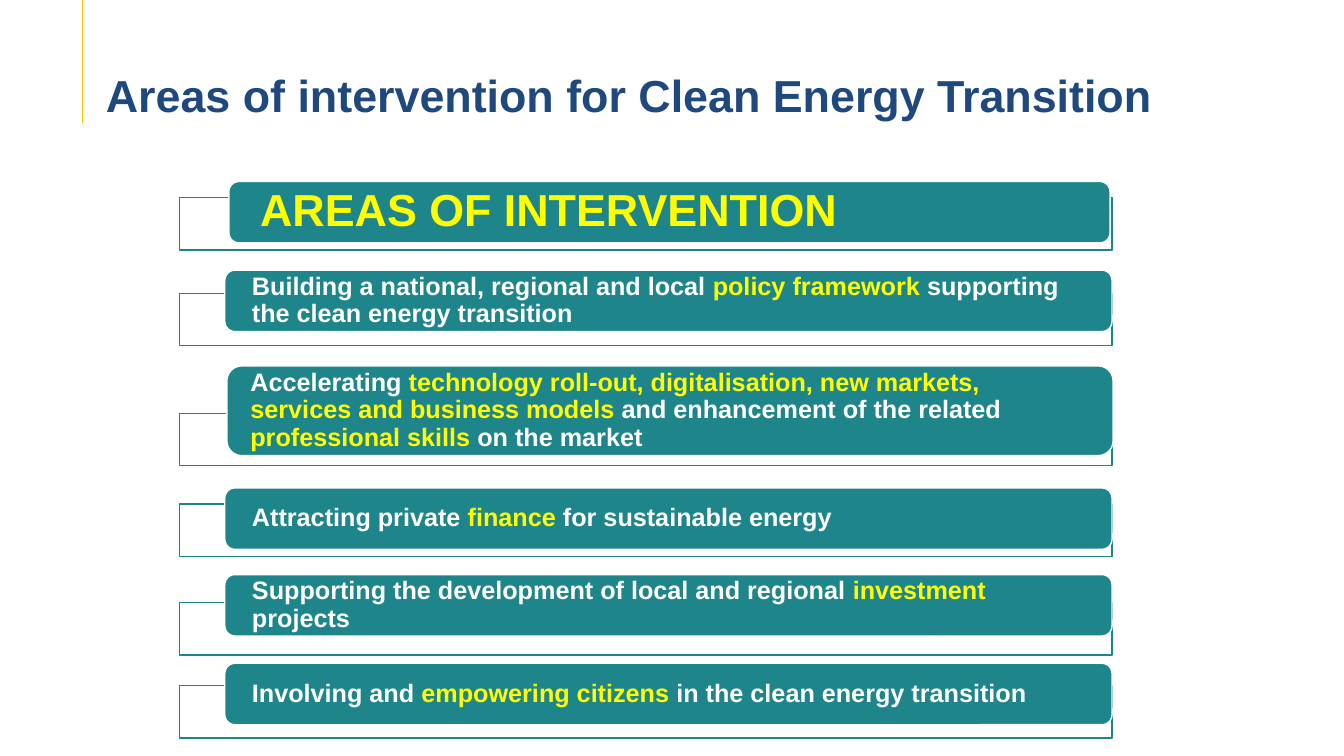
"""Build the slide on areas of intervention for the clean energy transition."""
import pptx
import pptx.dml.color
import pptx.enum.shapes
import pptx.enum.text
import pptx.oxml.ns
import pptx.util
from lxml import etree

TITLE = "Areas of intervention for Clean Energy Transition"
COLORS = {"teal": "1E858B", "white": "FFFFFF", "yellow": "FFFF00",
          "navy": "1F497D", "amber": "FFC000"}
WIDE = {"left": 2.23, "width": 8.8, "height": 0.61, "inset": 0.24, "size": 18}
HEAD = {"left": 2.27, "width": 8.74, "height": 0.61, "inset": 0.28, "size": 32}
TALL = {"left": 2.25, "width": 8.79, "height": 0.89, "inset": 0.19, "size": 18}
FRAME = {"left": 1.78, "width": 9.25, "height": 0.52}
AREAS = [
    (1.96, 1.8, HEAD, [("AREAS OF INTERVENTION", "yellow")]),
    (2.91, 2.68, WIDE, [("Building a national, regional and local ", "white"),
                        ("policy framework ", "yellow"),
                        ("supporting the clean energy transition", "white")]),
    (4.1, 3.63, TALL, [("Accelerating ", "white"),
                       ("technology roll-out, digitalisation, new markets, "
                        "services and business models ", "yellow"),
                       ("and enhancement of the related ", "white"),
                       ("professional skills ", "yellow"),
                       ("on the market", "white")]),
    (5, 4.84, WIDE, [("Attracting private ", "white"), ("finance ", "yellow"),
                     ("for sustainable energy", "white")]),
    (5.98, 5.7, WIDE, [("Supporting the development of local and regional ", "white"),
                       ("investment ", "yellow"), ("projects", "white")]),
    (6.8, 6.58, WIDE, [("Involving and ", "white"), ("empowering citizens ", "yellow"),
                       ("in the clean energy transition", "white")]),
]
SHAPES = pptx.enum.shapes.MSO_SHAPE
ALIGN = pptx.enum.text.PP_ALIGN
ANCHOR = pptx.enum.text.MSO_ANCHOR
inch, pt = pptx.util.Inches, pptx.util.Pt


def apply(obj, **values):
    for name, value in values.items():
        setattr(obj, name, value)


def rgb(name):
    return pptx.dml.color.RGBColor.from_string(COLORS[name])


def paint(sp, fill):
    sp.fill.solid()
    sp.fill.fore_color.rgb = rgb(fill)


def add_run(p, text, size, color):
    r = p.add_run()
    r.text = text
    apply(r.font, name="Arial", size=pt(size), bold=True)
    r.font.color.rgb = rgb(color)


def add_box(s, kind, top, box, fill, line):
    sp = s.shapes.add_shape(kind, inch(box["left"]), inch(top),
                            inch(box["width"]), inch(box["height"]))
    sp.shadow.inherit = False
    paint(sp, fill)
    sp.line.color.rgb = rgb(line)
    sp.line.width = pt(1)
    return sp


def add_area(s, frame_top, top, box, runs):
    frame = add_box(s, SHAPES.RECTANGLE, frame_top, FRAME, "white", "teal")
    clr = frame.fill._xPr.find(".//" + pptx.oxml.ns.qn("a:srgbClr"))
    etree.SubElement(clr, pptx.oxml.ns.qn("a:alpha"), val="90000")
    sp = add_box(s, SHAPES.ROUNDED_RECTANGLE, top, box, "teal", "white")
    tf = sp.text_frame
    apply(tf, word_wrap=True, vertical_anchor=ANCHOR.MIDDLE, margin_top=0, margin_bottom=0,
          margin_left=inch(box["inset"]), margin_right=inch(0.25))
    p = tf.paragraphs[0]
    apply(p, alignment=ALIGN.LEFT, line_spacing=0.9)
    for text, color in runs:
        add_run(p, text, box["size"], color)


def add_title(s):
    sp = s.shapes.title
    apply(sp, left=inch(0.33), top=inch(0.58), width=inch(13), height=inch(0.77))
    paint(sp, "white")
    tf = sp.text_frame
    apply(tf, word_wrap=True, vertical_anchor=ANCHOR.TOP,
          auto_size=pptx.enum.text.MSO_AUTO_SIZE.NONE,
          margin_left=inch(0.72), margin_top=inch(0.09))
    p = tf.paragraphs[0]
    p.alignment = ALIGN.LEFT
    add_run(p, TITLE, 32, "navy")


def add_rule(s):
    rule = s.shapes.add_connector(pptx.enum.shapes.MSO_CONNECTOR.STRAIGHT,
                                  inch(0.82), 0, inch(0.82), inch(1.22))
    rule.line.color.rgb = rgb("amber")
    rule.line.width = pt(0.5)
    etree.SubElement(rule.line._get_or_add_ln().getparent(), pptx.oxml.ns.qn("a:effectLst"))


def main():
    prs = pptx.Presentation()
    apply(prs, slide_width=inch(13.33), slide_height=inch(7.5))
    s = prs.slides.add_slide(prs.slide_layouts[5])
    add_title(s)
    for area in AREAS:
        add_area(s, *area)
    add_rule(s)
    prs.save("out.pptx")


if __name__ == "__main__":
    main()
